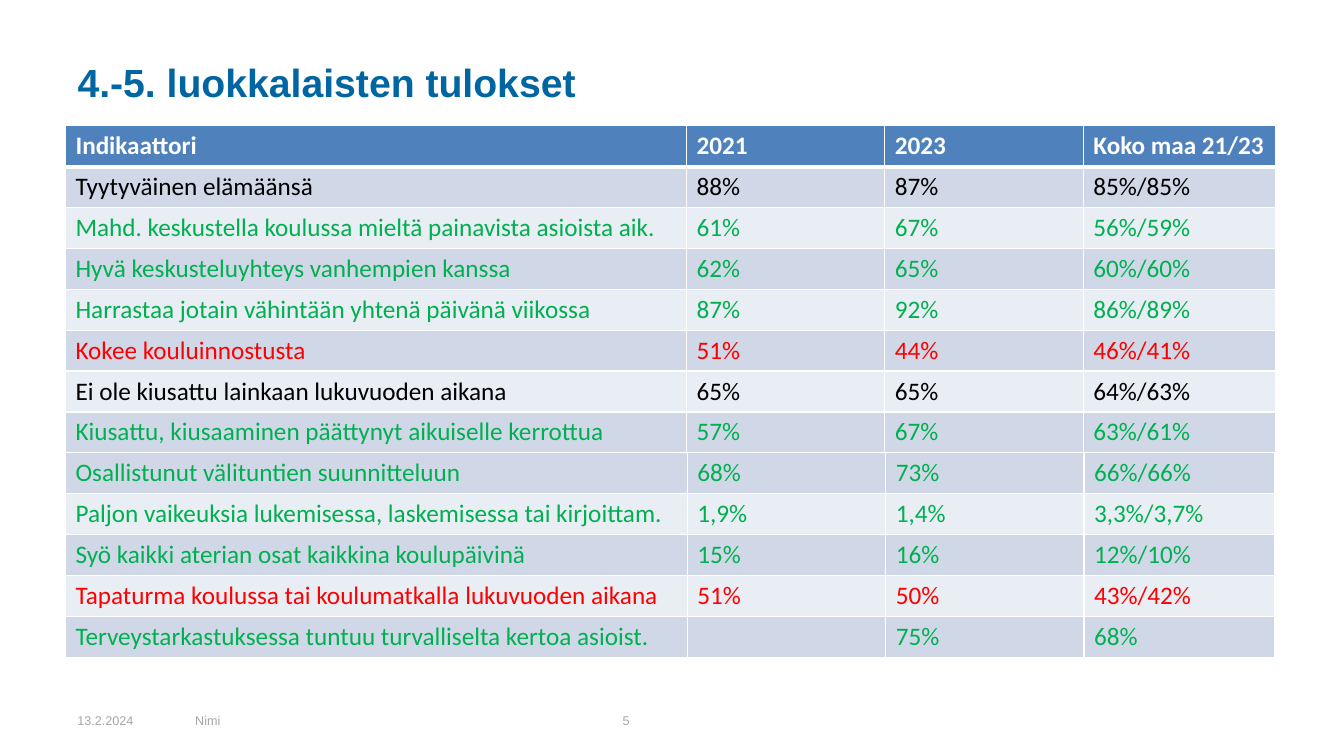
from dataclasses import dataclass

from lxml import etree
from pptx import Presentation
from pptx.dml.color import RGBColor
from pptx.enum.text import MSO_ANCHOR, PP_ALIGN
from pptx.oxml.ns import qn
from pptx.util import Cm, Pt

LEFT = PP_ALIGN.LEFT
MIDDLE = MSO_ANCHOR.MIDDLE
TITLE_ONLY = 5


@dataclass(frozen=True)
class Theme:
    title_font: str = "Arial"
    table_font: str = "Calibri"
    title_size: int = 28
    table_size: int = 18
    footer_size: int = 9
    title: str = "0066A1"
    footer: str = "A6A6A6"
    header: str = "4F81BD"
    dark_band: str = "D0D8E8"
    light_band: str = "E9EDF4"
    white: str = "FFFFFF"
    same: str = "000000"
    better: str = "00B050"
    worse: str = "FF0000"


THEME = Theme()

HEADINGS = ("Indikaattori", "2021", "2023", "Koko maa 21/23")

# Each result: its colour, the indicator and the three values
FIRST_RESULTS = [
    (THEME.same, "Tyytyväinen elämäänsä", "88%", "87%", "85%/85%"),
    (THEME.better, "Mahd. keskustella koulussa mieltä painavista asioista aik.",
     "61%", "67%", "56%/59%"),
    (THEME.better, "Hyvä keskusteluyhteys vanhempien kanssa", "62%", "65%", "60%/60%"),
    (THEME.better, "Harrastaa jotain vähintään yhtenä päivänä viikossa",
     "87%", "92%", "86%/89%"),
    (THEME.worse, "Kokee kouluinnostusta", "51%", "44%", "46%/41%"),
    (THEME.same, "Ei ole kiusattu lainkaan lukuvuoden aikana", "65%", "65%", "64%/63%"),
    (THEME.better, "Kiusattu, kiusaaminen päättynyt aikuiselle kerrottua",
     "57%", "67%", "63%/61%"),
]
MORE_RESULTS = [
    (THEME.better, "Osallistunut välituntien suunnitteluun", "68%", "73%", "66%/66%"),
    (THEME.better, "Paljon vaikeuksia lukemisessa, laskemisessa tai kirjoittam.",
     "1,9%", "1,4%", "3,3%/3,7%"),
    (THEME.better, "Syö kaikki aterian osat kaikkina koulupäivinä",
     "15%", "16%", "12%/10%"),
    (THEME.worse, "Tapaturma koulussa tai koulumatkalla lukuvuoden aikana",
     "51%", "50%", "43%/42%"),
    (THEME.better, "Terveystarkastuksessa tuntuu turvalliselta kertoa asioist.",
     "", "75%", "68%"),
]


def write(frame, text, *, font, size, color, bold=False):
    paragraph = frame.paragraphs[0]
    paragraph.alignment = LEFT
    if not text:
        return
    run = paragraph.add_run()
    run.text = text
    run.font.name = font
    run.font.size = Pt(size)
    run.font.bold = bold
    run.font.color.rgb = RGBColor.from_string(color)


class SlideBuilder:
    def __init__(self, presentation, theme):
        self.theme = theme
        layout = presentation.slide_layouts[TITLE_ONLY]
        self.slide = presentation.slides.add_slide(layout)

    def title(self, text, left, top, width, height):
        title = self.slide.shapes.title
        title.left, title.top = Cm(left), Cm(top)
        title.width, title.height = Cm(width), Cm(height)
        title.text_frame.vertical_anchor = MIDDLE
        write(title.text_frame, text, font=self.theme.title_font,
              size=self.theme.title_size, color=self.theme.title, bold=True)

    def footer(self, text, left, width):
        box = self.slide.shapes.add_textbox(Cm(left), Cm(17.65), Cm(width), Cm(1.02))
        box.text_frame.word_wrap = True
        box.text_frame.vertical_anchor = MIDDLE
        write(box.text_frame, text, font=self.theme.title_font,
              size=self.theme.footer_size, color=self.theme.footer)

    def borders(self, cell, bottom):
        properties = cell._tc.get_or_add_tcPr()
        for side, points in (("L", 1), ("R", 1), ("T", 1), ("B", bottom)):
            line = etree.SubElement(properties, qn(f"a:ln{side}"), w=str(Pt(points)))
            fill = etree.SubElement(line, qn("a:solidFill"))
            etree.SubElement(fill, qn("a:srgbClr"), val=self.theme.white)

    def results_table(self, results, top, widths, row_height, headings=None):
        theme = self.theme
        rows = [(theme.white, *headings)] if headings else []
        rows += results
        table = self.slide.shapes.add_table(
            len(rows), len(widths), Cm(1.65), Cm(top),
            Cm(sum(widths)), Cm(row_height * len(rows))).table
        table.first_row = bool(headings)
        table.horz_banding = False
        for column, width in zip(table.columns, widths):
            column.width = Cm(width)

        first_result = 1 if headings else 0
        for index, (color, *texts) in enumerate(rows):
            is_header = index < first_result
            is_dark = (index - first_result) % 2 == 0
            band = theme.dark_band if is_dark else theme.light_band
            for column, text in enumerate(texts):
                cell = table.cell(index, column)
                self.borders(cell, bottom=3 if is_header else 1)
                cell.fill.solid()
                cell.fill.fore_color.rgb = RGBColor.from_string(
                    theme.header if is_header else band)
                write(cell.text_frame, text, font=theme.table_font,
                      size=theme.table_size, color=color, bold=is_header)


def main():
    presentation = Presentation()
    presentation.slide_width, presentation.slide_height = Cm(33.87), Cm(19.05)
    builder = SlideBuilder(presentation, THEME)

    # Title
    builder.title("4.-5. luokkalaisten tulokset", 1.7, 0.48, 30.48, 3.18)

    # Results, in two tables that meet
    builder.results_table(FIRST_RESULTS, 3.17, (15.65, 5, 5, 4.85), 1.03, HEADINGS)
    builder.results_table(MORE_RESULTS, 11.41, (15.67, 5, 5, 4.8), 1.03)

    # Footer: date, name and page number
    builder.footer("13.2.2024", 1.7, 2.97)
    builder.footer("Nimi", 4.67, 10.72)
    builder.footer("5", 15.44, 7.9)

    presentation.save("out.pptx")


if __name__ == "__main__":
    main()
